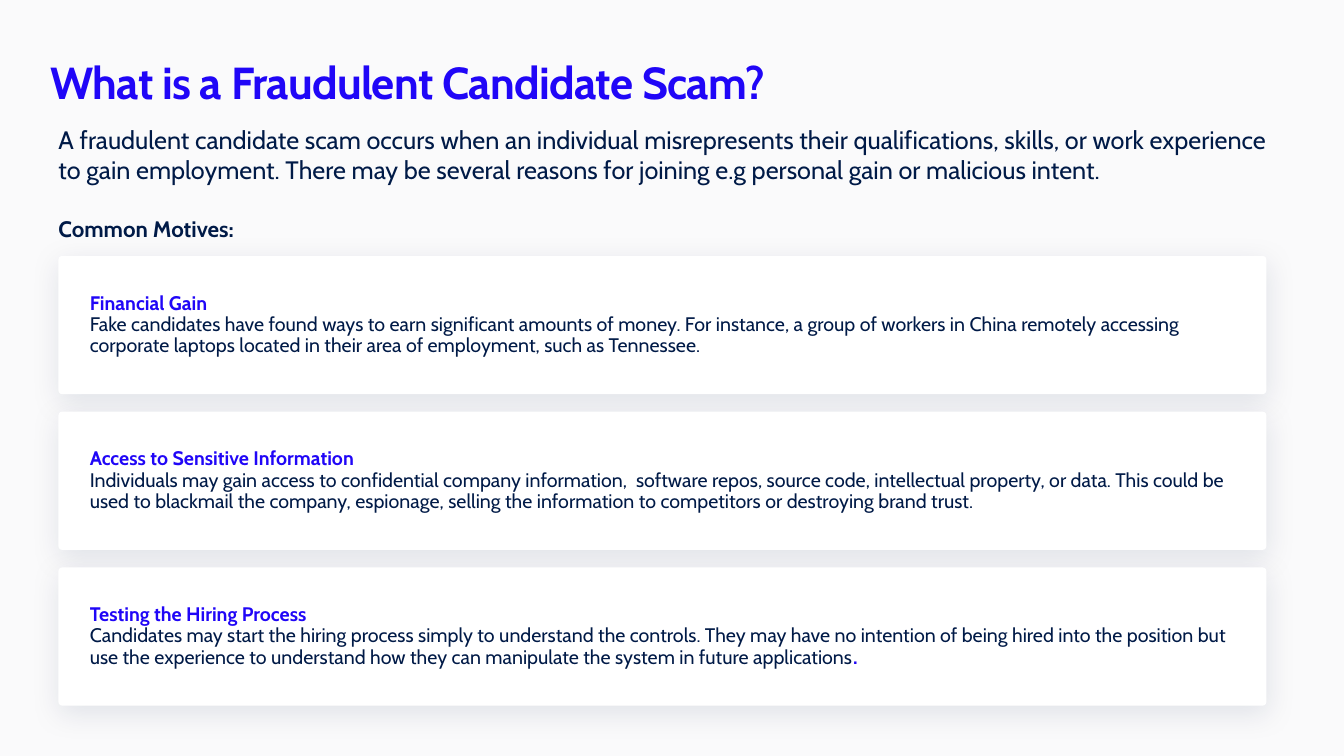
from dataclasses import dataclass

from lxml.etree import SubElement
from pptx import Presentation
from pptx.dml.color import RGBColor
from pptx.enum.shapes import MSO_SHAPE as Shape
from pptx.enum.text import MSO_ANCHOR as Anchor, MSO_AUTO_SIZE as AutoSize, PP_ALIGN as Align
from pptx.oxml.ns import qn
from pptx.slide import Slide
from pptx.text.text import Font, TextFrame
from pptx.util import Inches, Pt

FONT = "Cabin"
BLUE = "2006F7"
NAVY = "001A47"
WHITE = "FFFFFF"
BACKGROUND = "FAFAFB"

LEFT = 0.58
CARD_WIDTH = 11.98
CARD_HEIGHT = 1.37
CARD_TOP = 2.54
CARD_STEP = 1.545


@dataclass(frozen=True)
class Motive:
    heading: str
    detail: str
    ending: str = ""


@dataclass(frozen=True)
class Label:
    text: str
    top: float
    width: float
    height: float
    size: int
    bold: bool


MOTIVES = [
    Motive(
        "Financial Gain",
        "Fake candidates have found ways to earn significant amounts of money. For instance, "
        "a group of workers in China remotely accessing corporate laptops located in their "
        "area of employment, such as Tennessee.",
    ),
    Motive(
        "Access to Sensitive Information",
        "Individuals may gain access to confidential company information,  software repos, "
        "source code, intellectual property, or data. This could be used to blackmail the "
        "company, espionage, selling the information to competitors or destroying brand trust.",
    ),
    Motive(
        "Testing the Hiring Process",
        "Candidates may start the hiring process simply to understand the controls. They may "
        "have no intention of being hired into the position but use the experience to "
        "understand how they can manipulate the system in future applications",
        ".",
    ),
]

LABELS = [
    Label(
        "A fraudulent candidate scam occurs when an individual misrepresents their "
        "qualifications, skills, or work experience to gain employment. There may be several "
        "reasons for joining e.g personal gain or malicious intent.",
        1.23, 11.98, 0.84, 18, False,
    ),
    Label("Common Motives:", 2.13, 12.08, 0.36, 16, True),
]


def color(value: str) -> RGBColor:
    return RGBColor.from_string(value)


def style(font: Font, size: int, shade: str, bold: bool) -> None:
    font.name = FONT
    font.size = Pt(size)
    font.bold = bold
    font.color.rgb = color(shade)


def set_frame(frame: TextFrame, side: float, edge: float, anchor: Anchor) -> None:
    frame.word_wrap = True
    frame.auto_size = AutoSize.NONE
    frame.vertical_anchor = anchor
    frame.margin_left = frame.margin_right = Inches(side)
    frame.margin_top = frame.margin_bottom = Inches(edge)


def add_title(page: Slide) -> None:
    title = page.shapes.title
    title.left, title.top = Inches(0.5), Inches(0.5)
    title.width, title.height = Inches(7.7), Inches(0.62)
    set_frame(title.text_frame, 0, 0, Anchor.MIDDLE)
    para = title.text_frame.paragraphs[0]
    para.alignment = Align.LEFT
    span = para.add_run()
    span.text = "What is a Fraudulent Candidate Scam?"
    style(span.font, 32, BLUE, True)
    span.font._element.set("spc", "-50")


def add_label(page: Slide, label: Label) -> None:
    box = page.shapes.add_textbox(
        Inches(LEFT), Inches(label.top), Inches(label.width), Inches(label.height)
    )
    set_frame(box.text_frame, 0, 0, Anchor.TOP)
    para = box.text_frame.paragraphs[0]
    para.text = label.text
    style(para.font, label.size, NAVY, label.bold)


def add_card(page: Slide, motive: Motive, top: float) -> None:
    card = page.shapes.add_shape(
        Shape.ROUNDED_RECTANGLE,
        Inches(LEFT), Inches(top), Inches(CARD_WIDTH), Inches(CARD_HEIGHT),
    )
    card.adjustments[0] = 0.026
    card.fill.solid()
    card.fill.fore_color.rgb = color(WHITE)
    card.line.color.rgb = color(WHITE)
    card.line.width = Pt(0.5)
    outline = card.line._ln.find(".//" + qn("a:srgbClr"))
    SubElement(outline, qn("a:alpha"), val="13000")
    add_soft_shadow(card)

    set_frame(card.text_frame, 0.3, 0.05, Anchor.MIDDLE)
    para = card.text_frame.paragraphs[0]
    para.alignment = Align.LEFT
    para.line_spacing = 0.9
    para.space_after = Pt(5)
    heading = para.add_run()
    heading.text = motive.heading
    style(heading.font, 14, BLUE, True)
    para.add_line_break()
    detail = para.add_run()
    detail.text = motive.detail
    style(detail.font, 14, NAVY, False)
    if motive.ending:
        ending = para.add_run()
        ending.text = motive.ending
        style(ending.font, 14, BLUE, True)


def add_soft_shadow(card) -> None:
    card.shadow.inherit = False
    effects = card._element.spPr.find(qn("a:effectLst"))
    shadow = SubElement(
        effects, qn("a:outerShdw"),
        blurRad=str(Pt(20)), dist=str(Pt(5)), dir="5400000", algn="t", rotWithShape="0",
    )
    shade = SubElement(shadow, qn("a:srgbClr"), val=NAVY)
    SubElement(shade, qn("a:alpha"), val="10000")


def main() -> None:
    deck = Presentation()
    deck.slide_width, deck.slide_height = Inches(13.33), Inches(7.5)
    page = deck.slides.add_slide(deck.slide_layouts[5])
    page.background.fill.solid()
    page.background.fill.fore_color.rgb = color(BACKGROUND)

    add_title(page)
    for index, motive in enumerate(MOTIVES):
        add_card(page, motive, CARD_TOP + index * CARD_STEP)
    for label in LABELS:
        add_label(page, label)
    deck.save("out.pptx")


if __name__ == "__main__":
    main()
